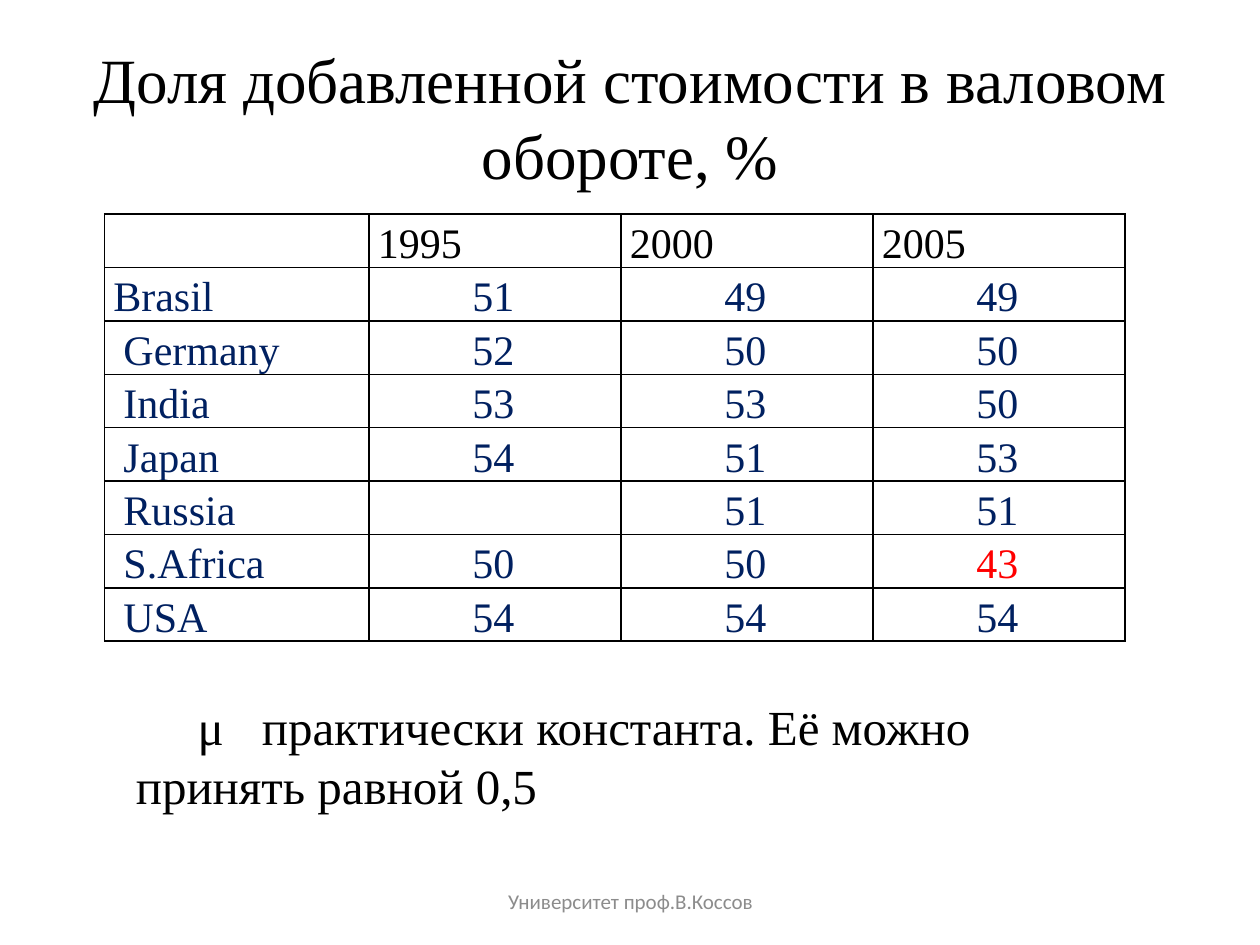
"""Build a slide with a table of value added shares by country."""
from lxml import etree
from pptx import Presentation
from pptx.dml.color import RGBColor
from pptx.enum import text
from pptx.oxml import ns
from pptx.util import Inches, Pt

TITLE = "Доля добавленной стоимости в валовом обороте, %"
NOTE = "μ\tпрактически константа. Её можно принять равной 0,5"
FOOTER = "Университет проф.В.Коссов"
ROWS = [
    ("", "1995", "2000", "2005"),
    ("Brasil", "51", "49", "49"),
    ("Germany", "52", "50", "50"),
    ("India", "53", "53", "50"),
    ("Japan", "54", "51", "53"),
    ("Russia", "", "51", "51"),
    ("S.Africa", "50", "50", "43"),
    ("USA", "54", "54", "54"),
]
WIDTHS = (2.1, 2, 2, 2)
HEIGHT = 3.39 / len(ROWS)
PAD = 0.07
LOW = "43"
COLORS = {"black": "000000", "navy": "002060", "red": "FF0000", "gray": "8C8C8C"}
SERIF = "Times New Roman"


def style(para, size, color="black", face=SERIF):
    for run in para.runs:
        run.font.size = Pt(size)
        run.font.name = face
        run.font.color.rgb = RGBColor.from_string(COLORS[color])


def add(slide, words, box):
    frame = slide.shapes.add_textbox(*map(Inches, box)).text_frame
    frame.word_wrap = True
    frame.text = words
    return frame


def border(cell):
    props = cell._tc.get_or_add_tcPr()
    for side in ("L", "R", "T", "B"):
        line = etree.SubElement(props, ns.qn(f"a:ln{side}"), w=str(Pt(1)))
        fill = etree.SubElement(line, ns.qn("a:solidFill"))
        etree.SubElement(fill, ns.qn("a:srgbClr"), val=COLORS["black"])


def indent(row, col):
    if row == 0:
        return 0
    if col:
        return 0.75
    return 0.08 if row > 1 else 0


def fill_cell(cell, words, row, col):
    border(cell)
    cell.fill.background()
    cell.vertical_anchor = text.MSO_ANCHOR.BOTTOM
    cell.margin_left = Inches(PAD + indent(row, col))
    cell.margin_right = Inches(PAD)
    cell.margin_top = cell.margin_bottom = 0
    if words:
        cell.text = words
        color = "black" if row == 0 else "red" if words == LOW else "navy"
        style(cell.text_frame.paragraphs[0], 24, color)


def add_grid(slide):
    box = (0.83, 1.7, sum(WIDTHS), HEIGHT * len(ROWS))
    table = slide.shapes.add_table(len(ROWS), len(WIDTHS), *map(Inches, box)).table
    table.first_row = table.horz_banding = False
    for column, width in zip(table.columns, WIDTHS):
        column.width = Inches(width)
    for r, row in enumerate(ROWS):
        table.rows[r].height = Inches(HEIGHT)
        for c, words in enumerate(row):
            fill_cell(table.cell(r, c), words, r, c)


def main():
    deck = Presentation()
    deck.slide_width, deck.slide_height = Inches(10), Inches(7.5)
    slide = deck.slides.add_slide(deck.slide_layouts[5])

    title = slide.shapes.title
    title.left, title.top, title.width, title.height = map(Inches, (0.5, 0.3, 9, 1.25))
    title.text_frame.text = TITLE
    style(title.text_frame.paragraphs[0], 36)

    foot = add(slide, FOOTER, (3.42, 6.95, 3.17, 0.4))
    foot.vertical_anchor = text.MSO_ANCHOR.MIDDLE
    foot.paragraphs[0].alignment = text.PP_ALIGN.CENTER
    style(foot.paragraphs[0], 12, "gray", "Calibri")

    add_grid(slide)

    para = add(slide, NOTE, (0.98, 5.48, 8.11, 1.04)).paragraphs[0]
    style(para, 28)
    props = para._p.get_or_add_pPr()
    props.set("marL", "0")
    props.set("indent", str(Inches(0.49)))
    stops = etree.SubElement(props, ns.qn("a:tabLst"))
    etree.SubElement(stops, ns.qn("a:tab"), pos=str(Inches(1.18)), algn="l")

    deck.save("out.pptx")


if __name__ == "__main__":
    main()
